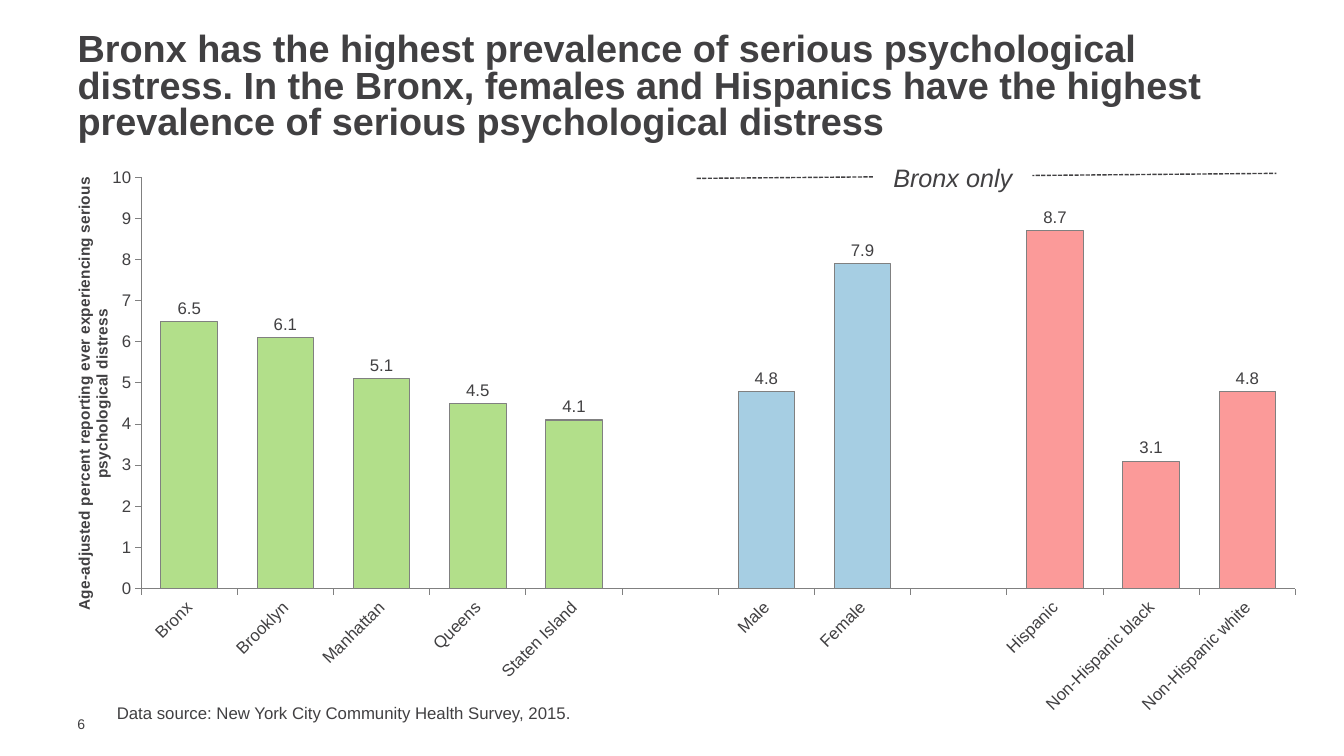
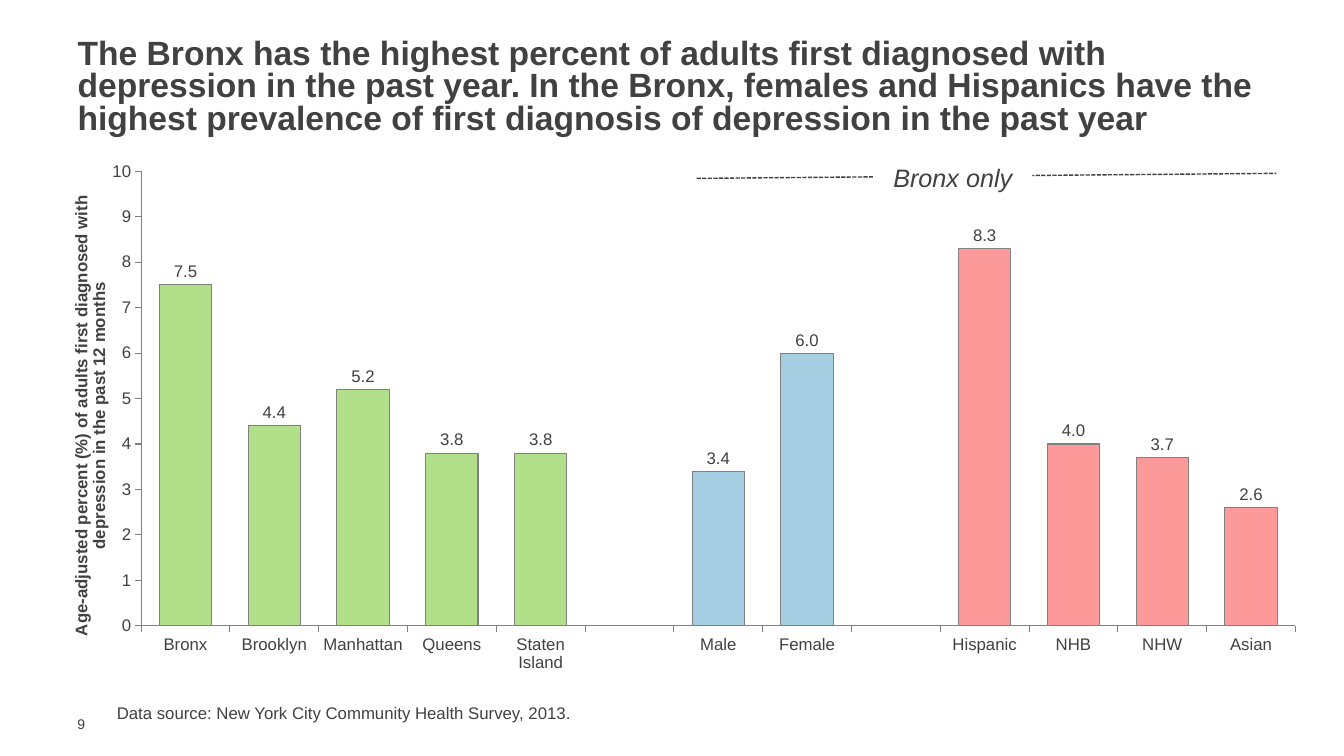
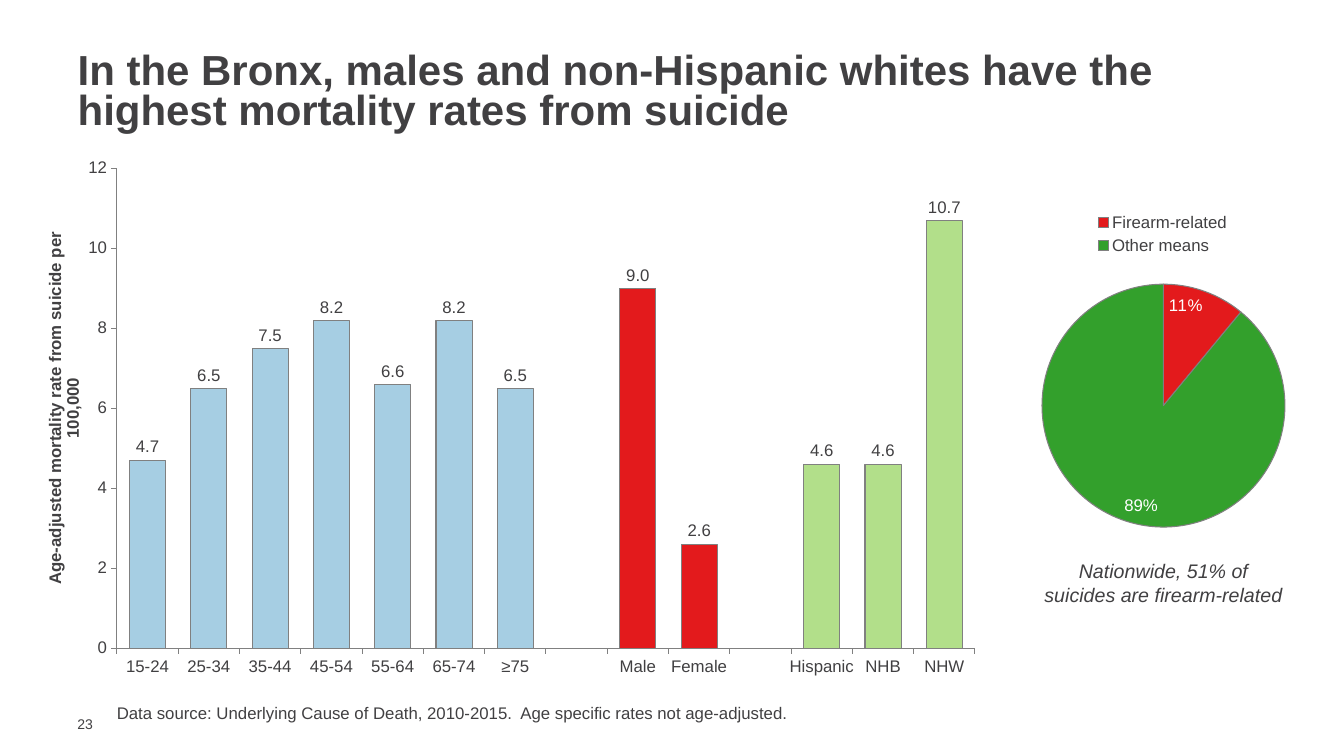
from lxml.etree import SubElement
from pptx import Presentation
from pptx.chart.data import CategoryChartData
from pptx.dml.color import RGBColor
from pptx.enum.chart import XL_CHART_TYPE as ChartType
from pptx.enum.chart import XL_LABEL_POSITION as LabelPosition
from pptx.enum.chart import XL_LEGEND_POSITION as LegendPosition
from pptx.enum.chart import XL_TICK_MARK as TickMark
from pptx.enum.dml import MSO_LINE as Dash
from pptx.enum.shapes import MSO_CONNECTOR as Connector
from pptx.enum.shapes import MSO_SHAPE as Shape
from pptx.enum.text import MSO_ANCHOR as Anchor
from pptx.enum.text import MSO_AUTO_SIZE as AutoSize
from pptx.enum.text import PP_ALIGN as Align
from pptx.oxml import parse_xml
from pptx.oxml.ns import nsdecls, qn
from pptx.util import Inches, Pt

COLORS = {
    "text": "414042",
    "line": "808080",
    "white": "FFFFFF",
    "light_green": "B2DF8A",
    "light_blue": "A6CEE3",
    "pink": "FB9A99",
    "red": "E31A1C",
    "green": "33A02C",
}
FONT = "Arial"
TITLE_ONLY = 5
WIDE_CHART = (0.66, 1.61, 12.33, 5.57)

SLIDES = [
    {
        "number": "6",
        "title": "Bronx has the highest prevalence of serious psychological distress. In the Bronx, "
                 "females and Hispanics have the highest prevalence of serious psychological distress",
        "title_box": (0.67, 0.28, 12, 1.19),
        "title_size": 27,
        "source": "Data source: New York City Community Health Survey, 2015.",
        "bronx_band": True,
        "columns": {
            "box": WIDE_CHART,
            "plot": (1.4, 1.76, 11.45, 4.08),
            "axis_title": "Age-adjusted percent reporting ever experiencing serious psychological distress",
            "axis_title_at": (0.7, 1.73),
            "axis_title_size": 11,
            "scale": {"minimum_scale": 0, "maximum_scale": 10, "major_unit": 1},
            "label_turn": -45,
            "groups": [
                ("light_green", {"Bronx": 6.5, "Brooklyn": 6.1, "Manhattan": 5.1,
                                 "Queens": 4.5, "Staten Island": 4.1}),
                ("light_blue", {"Male": 4.8, "Female": 7.9}),
                ("pink", {"Hispanic": 8.7, "Non-Hispanic black": 3.1, "Non-Hispanic white": 4.8}),
            ],
        },
    },
    {
        "number": "9",
        "title": "The Bronx has the highest percent of adults first diagnosed with depression in the "
                 "past year. In the Bronx, females and Hispanics have the highest prevalence of first "
                 "diagnosis of depression in the past year",
        "title_box": (0.67, 0.34, 12, 1.07),
        "title_size": 24,
        "source": "Data source: New York City Community Health Survey, 2013.",
        "bronx_band": True,
        "columns": {
            "box": WIDE_CHART,
            "plot": (1.4, 1.7, 11.45, 4.51),
            "axis_title": "Age-adjusted percent (%) of adults first diagnosed with depression "
                          "in the past 12 months",
            "axis_title_at": (0.67, 1.91),
            "axis_title_size": 12,
            "scale": {"minimum_scale": 0, "maximum_scale": 10, "major_unit": 1},
            "label_turn": 0,
            "groups": [
                ("light_green", {"Bronx": 7.5, "Brooklyn": 4.4, "Manhattan": 5.2,
                                 "Queens": 3.8, "Staten Island": 3.8}),
                ("light_blue", {"Male": 3.4, "Female": 6}),
                ("pink", {"Hispanic": 8.3, "NHB": 4, "NHW": 3.7, "Asian": 2.6}),
            ],
        },
    },
    {
        "number": "23",
        "title": "In the Bronx, males and non-Hispanic whites have the highest mortality rates from suicide",
        "title_box": (0.67, 0.47, 12, 0.91),
        "title_size": 30,
        "source": "Data source: Underlying Cause of Death, 2010-2015.  Age specific rates not age-adjusted.",
        "columns": {
            "box": (0.33, 1.58, 9.5, 5.17),
            "plot": (1.16, 1.67, 8.51, 4.76),
            "axis_title": "Age-adjusted mortality rate from suicide per 100,000",
            "axis_title_at": (0.41, 2.27),
            "axis_title_size": 12,
            "scale": {"minimum_scale": 0, "maximum_scale": 12, "major_unit": 2},
            "groups": [
                ("light_blue", {"15-24": 4.7, "25-34": 6.5, "35-44": 7.5, "45-54": 8.2,
                                "55-64": 6.6, "65-74": 8.2, "≥75": 6.5}),
                ("red", {"Male": 9, "Female": 2.6}),
                ("light_green", {"Hispanic": 4.6, "NHB": 4.6, "NHW": 10.7}),
            ],
        },
        "pie": {
            "box": (10.08, 1.75, 2.78, 3.71),
            "plot": (10.33, 2.82, 2.42, 2.41),
            "legend": (10.83, 2.07, 1.4, 0.5),
            "slices": [("Firearm-related", 11, "red"), ("Other means", 89, "green")],
            "note": "Nationwide, 51% of suicides are firearm-related",
        },
    },
]


def color(name):
    """Return the named colour."""
    return RGBColor.from_string(COLORS[name])


def inches(values):
    """Turn plain numbers into lengths."""
    return [Inches(value) for value in values]


def set_values(target, values):
    """Set attributes from a dict of format values."""
    for name, value in values.items():
        setattr(target, name, value)


def style_font(font, size, color_name="text", **values):
    """Apply the shared typeface with a size and colour."""
    set_values(font, {"name": FONT, "size": Pt(size), **values})
    font.color.rgb = color(color_name)


def style_line(line, color_name="line", width=0.75):
    """Give a line its colour and width."""
    line.color.rgb = color(color_name)
    line.width = Pt(width)


def write_text(shape, text, size, frame_values=None, align=Align.LEFT, spacing=None, **font_values):
    """Write one formatted paragraph into a shape."""
    frame = shape.text_frame
    set_values(frame, {"word_wrap": True, "auto_size": AutoSize.NONE, **(frame_values or {})})
    frame.text = text
    paragraph = frame.paragraphs[0]
    set_values(paragraph, {"alignment": align, "line_spacing": spacing})
    style_font(paragraph.runs[0].font, size, **font_values)


def place_in_chart(element, index, frame, box):
    """Fix a chart part at a slide position inside the chart box."""
    for old_layout in element.findall(qn("c:layout")):
        element.remove(old_layout)
    layout = parse_xml(f"<c:layout {nsdecls('c')}/>")
    manual = SubElement(layout, qn("c:manualLayout"))
    left, top, width, height = box
    shares = [(frame[0] - left) / width, (frame[1] - top) / height]
    if len(frame) == 4:
        shares += [frame[2] / width, frame[3] / height]
    settings = [("layoutTarget", "inner")] if index == 0 else []
    settings += [("xMode", "edge"), ("yMode", "edge")]
    settings += zip("xywh", (f"{share:.4f}" for share in shares))
    for name, value in settings:
        SubElement(manual, qn(f"c:{name}")).set("val", value)
    element.insert(index, layout)


def turn_text(element, degrees):
    """Turn the text of a chart part."""
    body = element.find(".//" + qn("a:bodyPr"))
    body.set("rot", str(degrees * 60000))
    body.set("vert", "horz")


def add_chart(slide, kind, labels, values, content):
    """Add a one-series chart with the shared look."""
    data = CategoryChartData()
    data.categories = labels
    data.add_series("Series 1", values)
    box = content["box"]
    chart = slide.shapes.add_chart(kind, *inches(box), data).chart
    set_values(chart, {"has_title": False, "has_legend": False})
    style_font(chart.font, 12)
    place_in_chart(chart.plots[0]._element.getparent(), 0, content["plot"], box)
    return chart


def fill_format(chart_format, color_name):
    """Fill a series or point and outline it."""
    chart_format.fill.solid()
    chart_format.fill.fore_color.rgb = color(color_name)
    style_line(chart_format.line)


def add_columns(slide, columns):
    """Add a column chart whose groups are parted by an empty category."""
    labels, values, names = [], [], []
    for name, group in columns["groups"]:
        if labels:
            labels.append("")
            values.append(None)
            names.append(name)
        labels += group.keys()
        values += group.values()
        names += [name] * len(group)
    chart = add_chart(slide, ChartType.COLUMN_CLUSTERED, labels, values, columns)

    plot = chart.plots[0]
    set_values(plot, {"gap_width": 70, "vary_by_categories": False, "has_data_labels": True})
    set_values(plot.data_labels, {"show_value": True, "number_format": "0.0",
                                  "number_format_is_linked": False,
                                  "position": LabelPosition.OUTSIDE_END})
    style_font(plot.data_labels.font, 12)
    series = plot.series[0]
    fill_format(series.format, names[0])
    for index, name in enumerate(names):
        if name != names[0] and values[index] is not None:
            fill_format(series.points[index].format, name)

    category_axis, value_axis = chart.category_axis, chart.value_axis
    for axis in (category_axis, value_axis):
        set_values(axis, {"has_major_gridlines": False, "major_tick_mark": TickMark.OUTSIDE,
                          "minor_tick_mark": TickMark.NONE})
        style_line(axis.format.line)
    for text_properties in category_axis._element.findall(qn("c:txPr")):
        category_axis._element.remove(text_properties)
    if "label_turn" in columns:
        style_font(category_axis.tick_labels.font, 12)
        turn_text(category_axis._element.find(qn("c:txPr")).getparent(), columns["label_turn"])
    style_font(value_axis.tick_labels.font, 12)
    set_values(value_axis, columns["scale"])
    set_values(value_axis.tick_labels, {"number_format": "General", "number_format_is_linked": False})

    title = value_axis.axis_title
    title.text_frame.text = columns["axis_title"]
    style_font(title.text_frame.paragraphs[0].runs[0].font, columns["axis_title_size"], bold=True)
    turn_text(title._element, -90)
    place_in_chart(title._element, 1, columns["axis_title_at"], columns["box"])


def add_pie(slide, pie):
    """Add the pie with its legend and the note below it."""
    labels, values, names = zip(*pie["slices"])
    chart = add_chart(slide, ChartType.PIE, labels, values, pie)
    chart.has_legend = True
    set_values(chart.legend, {"position": LegendPosition.RIGHT, "include_in_layout": False})
    style_font(chart.legend.font, 12)
    place_in_chart(chart.legend._element, 1, pie["legend"], pie["box"])
    plot = chart.plots[0]
    set_values(plot, {"vary_by_categories": True, "has_data_labels": True})
    set_values(plot.data_labels, {"show_percentage": True, "show_value": False,
                                  "number_format": "0%", "number_format_is_linked": False,
                                  "position": LabelPosition.INSIDE_END})
    style_font(plot.data_labels.font, 12, "white")
    for index, name in enumerate(names):
        fill_format(plot.series[0].points[index].format, name)

    left, top, width, height = pie["box"]
    note = slide.shapes.add_textbox(*inches((left + 0.17, top + height + 0.04, width - 0.2, 0.57)))
    write_text(note, pie["note"], 14, align=Align.CENTER, italic=True)


def add_bronx_band(slide, left=6.91, top=1.56):
    """Add the dashed line and label over the Bronx groups."""
    ends = inches((left, top + 0.21, left + 5.75, top + 0.16))
    line = slide.shapes.add_connector(Connector.STRAIGHT, *ends)
    style_line(line.line, "text", 1)
    line.line.dash_style = Dash.SQUARE_DOT
    SubElement(line._element.spPr, qn("a:effectLst"))
    label = slide.shapes.add_shape(Shape.RECTANGLE, *inches((left + 1.75, top, 1.58, 0.4)))
    label.shadow.inherit = False
    label.fill.solid()
    label.fill.fore_color.rgb = color("white")
    label.line.fill.background()
    write_text(label, "Bronx only", 18, {"vertical_anchor": Anchor.TOP}, Align.CENTER, italic=True)


def add_frame(slide, content):
    """Add the title, page number and data source."""
    title = slide.shapes.title
    set_values(title, dict(zip(("left", "top", "width", "height"), inches(content["title_box"]))))
    write_text(title, content["title"], content["title_size"], {"vertical_anchor": Anchor.MIDDLE},
               spacing=0.8, bold=True)
    number = slide.shapes.add_textbox(*inches((0.67, 7.1, 0.43, 0.17)))
    margins = {"margin_top": 0, "margin_right": 0, "margin_bottom": 0}
    write_text(number, content["number"], 10, {"vertical_anchor": Anchor.MIDDLE, **margins})
    source = slide.shapes.add_textbox(*inches((1.06, 6.92, 9.92, 0.3)))
    write_text(source, content["source"], 12)


def add_slide(presentation, content):
    """Build one chart slide."""
    slide = presentation.slides.add_slide(presentation.slide_layouts[TITLE_ONLY])
    add_columns(slide, content["columns"])
    add_frame(slide, content)
    if "bronx_band" in content:
        add_bronx_band(slide)
    if "pie" in content:
        add_pie(slide, content["pie"])


def main():
    """Build and save the presentation."""
    presentation = Presentation()
    set_values(presentation, {"slide_width": Inches(13.33), "slide_height": Inches(7.5)})
    for content in SLIDES:
        add_slide(presentation, content)
    presentation.save("out.pptx")


if __name__ == "__main__":
    main()
